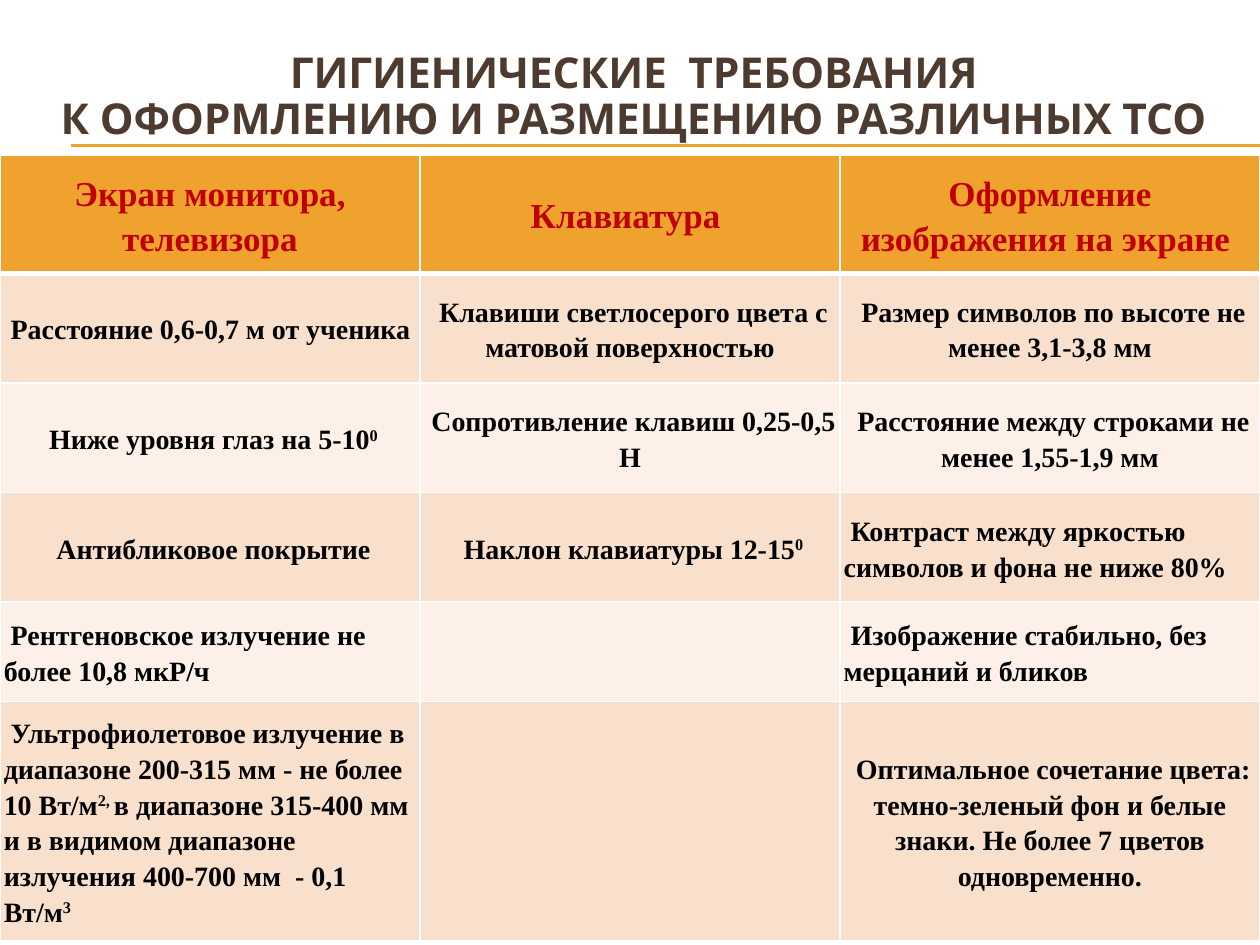
from lxml.etree import SubElement
from pptx import Presentation
from pptx.dml.color import RGBColor
from pptx.enum.shapes import MSO_CONNECTOR
from pptx.enum.text import MSO_ANCHOR, PP_ALIGN
from pptx.oxml.ns import qn
from pptx.util import Inches, Pt

COLORS = {name: RGBColor.from_string(value) for name, value in {
    "title": "4E3B30", "accent": "F0A22E", "heading": "C00000", "body": "000000",
    "band_dark": "F9E0CD", "band_light": "FCF0E8"}.items()}
BORDER = "FFFFFF"
NBSP = chr(160)

presentation = Presentation()
presentation.slide_width, presentation.slide_height = Inches(10), Inches(7.5)
slide = presentation.slides.add_slide(presentation.slide_layouts[6])


def add_run(paragraph, text, font_name, size, color):
    run = paragraph.add_run()
    run.text = text
    run.font.name, run.font.size, run.font.bold = font_name, Pt(size), True
    run.font.color.rgb = COLORS[color]
    return run


def add_borders(cell, bottom_width):
    properties = cell._tc.get_or_add_tcPr()
    widths = {"a:lnL": 1, "a:lnR": 1, "a:lnT": 1, "a:lnB": bottom_width}
    for position, (tag, width) in enumerate(widths.items()):
        line = SubElement(properties, qn(tag), w=str(Pt(width)))
        fill = SubElement(line, qn("a:solidFill"))
        SubElement(fill, qn("a:srgbClr"), val=BORDER)
        properties.insert(position, line)


# Double rule under the title
for top in (1.15, 1.16):
    rule = slide.shapes.add_connector(
        MSO_CONNECTOR.STRAIGHT, Inches(0.56), Inches(top), Inches(10), Inches(top))
    rule.line.color.rgb = COLORS["accent"]
    rule.line.width = Pt(0.75)
    SubElement(rule._element.spPr, qn("a:effectLst"))

# Title, standing on the rule
title = slide.shapes.add_textbox(Inches(0.28), Inches(0.52), Inches(9.5), Inches(0.92))
frame = title.text_frame
frame.word_wrap = True
frame.vertical_anchor = MSO_ANCHOR.BOTTOM
frame.margin_bottom = Inches(0.3)
paragraph = frame.paragraphs[0]
paragraph.alignment = PP_ALIGN.CENTER
paragraph.line_spacing = 0.9
add_run(paragraph, "ГИГИЕНИЧЕСКИЕ  ТРЕБОВАНИЯ", "Karla", 24.3, "title")
paragraph.add_line_break()
add_run(paragraph, "К ОФОРМЛЕНИЮ И РАЗМЕЩЕНИЮ РАЗЛИЧНЫХ ТСО", "Karla", 24.3, "title")

# Table content: text between ^ marks is superscript
rows = [
    ["Экран монитора, телевизора", "Клавиатура" + NBSP,
     "Оформление изображения на экране" + NBSP],
    ["Расстояние 0,6-0,7 м от ученика",
     "Клавиши светлосерого цвета с матовой поверхностью",
     "Размер символов по высоте не менее 3,1-3,8 мм"],
    ["Ниже уровня глаз на 5-10^0^", "Сопротивление клавиш 0,25-0,5 Н",
     "Расстояние между строками не менее 1,55-1,9 мм"],
    ["Антибликовое покрытие", "Наклон клавиатуры 12-15^0^",
     "Контраст между яркостью символов и фона не ниже 80%"],
    ["Рентгеновское излучение не более 10,8 мкР/ч", "",
     "Изображение стабильно, без мерцаний и бликов"],
    ["Ультрофиолетовое излучение в диапазоне 200-315 мм - не более 10 Вт/м"
     f"^2,{NBSP}^в диапазоне 315-400 мм и в видимом диапазоне излучения "
     f"400-700 мм{NBSP} - 0,1 Вт/м^3^", "",
     "Оптимальное сочетание цвета: темно-зеленый фон и белые знаки. "
     "Не более 7 цветов одновременно."],
]
row_heights = [0.94, 0.87, 0.87, 0.87, 0.79, 1.76]
left_aligned = {(1, 0), (3, 2), (4, 0), (4, 2), (5, 0)}

# Table
table = slide.shapes.add_table(
    len(rows), 3, 0, Inches(1.23), presentation.slide_width,
    Inches(sum(row_heights))).table
for row_index, (texts, height) in enumerate(zip(rows, row_heights)):
    table.rows[row_index].height = Inches(height)
    is_header = row_index == 0
    band = "accent" if is_header else "band_dark" if row_index % 2 else "band_light"
    size, color = (20, "heading") if is_header else (16, "body")
    for column_index, text in enumerate(texts):
        cell = table.cell(row_index, column_index)
        cell.fill.solid()
        cell.fill.fore_color.rgb = COLORS[band]
        add_borders(cell, 3 if is_header else 1)
        cell.vertical_anchor = MSO_ANCHOR.MIDDLE
        cell.margin_left = cell.margin_right = Inches(0.03)
        cell.margin_top = cell.margin_bottom = Inches(0.03)
        if not text:
            continue
        paragraph = cell.text_frame.paragraphs[0]
        is_left = (row_index, column_index) in left_aligned
        paragraph.alignment = PP_ALIGN.LEFT if is_left else PP_ALIGN.CENTER
        paragraph.line_spacing = 1.15
        paragraph.space_before = paragraph.space_after = Pt(1.4)
        full_text = text if is_header else NBSP + text
        for part_index, part in enumerate(full_text.split("^")):
            if part:
                run = add_run(paragraph, part, "Times New Roman", size, color)
                if part_index % 2:
                    run.font._element.set("baseline", "30000")

presentation.save("out.pptx")
